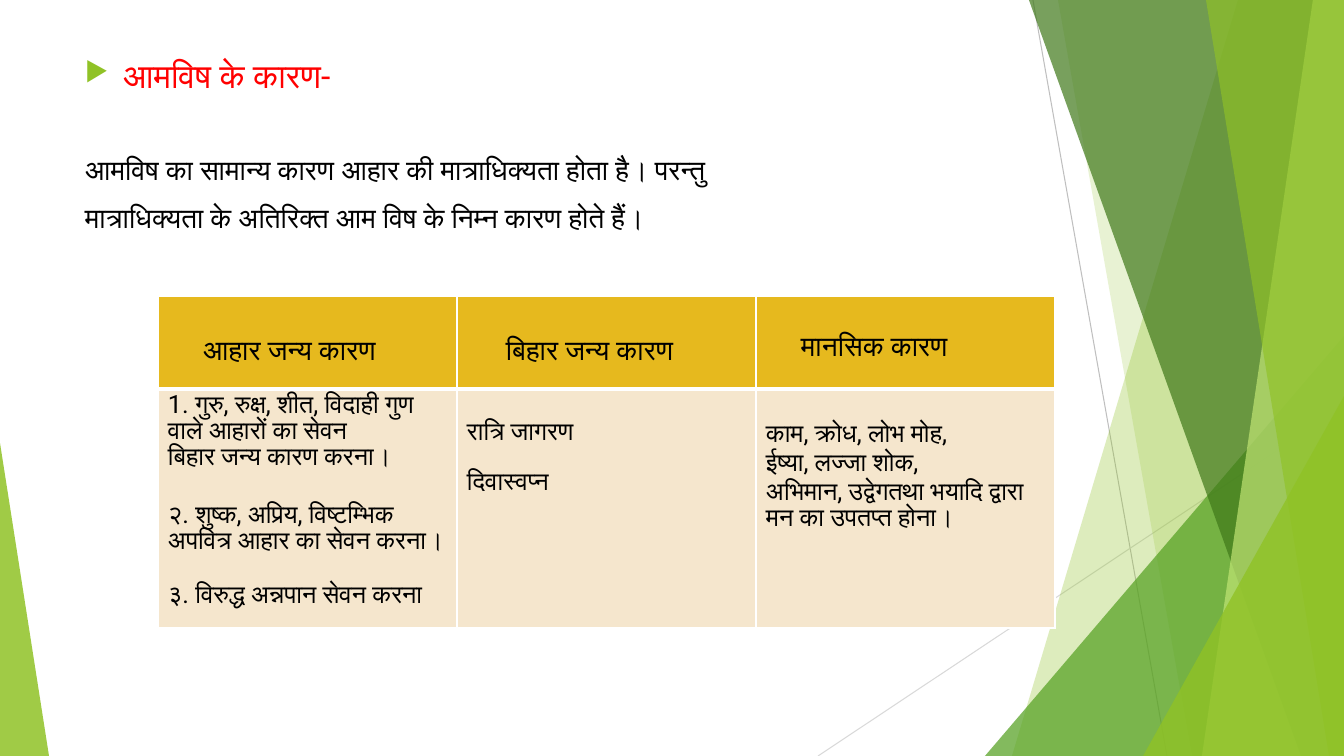
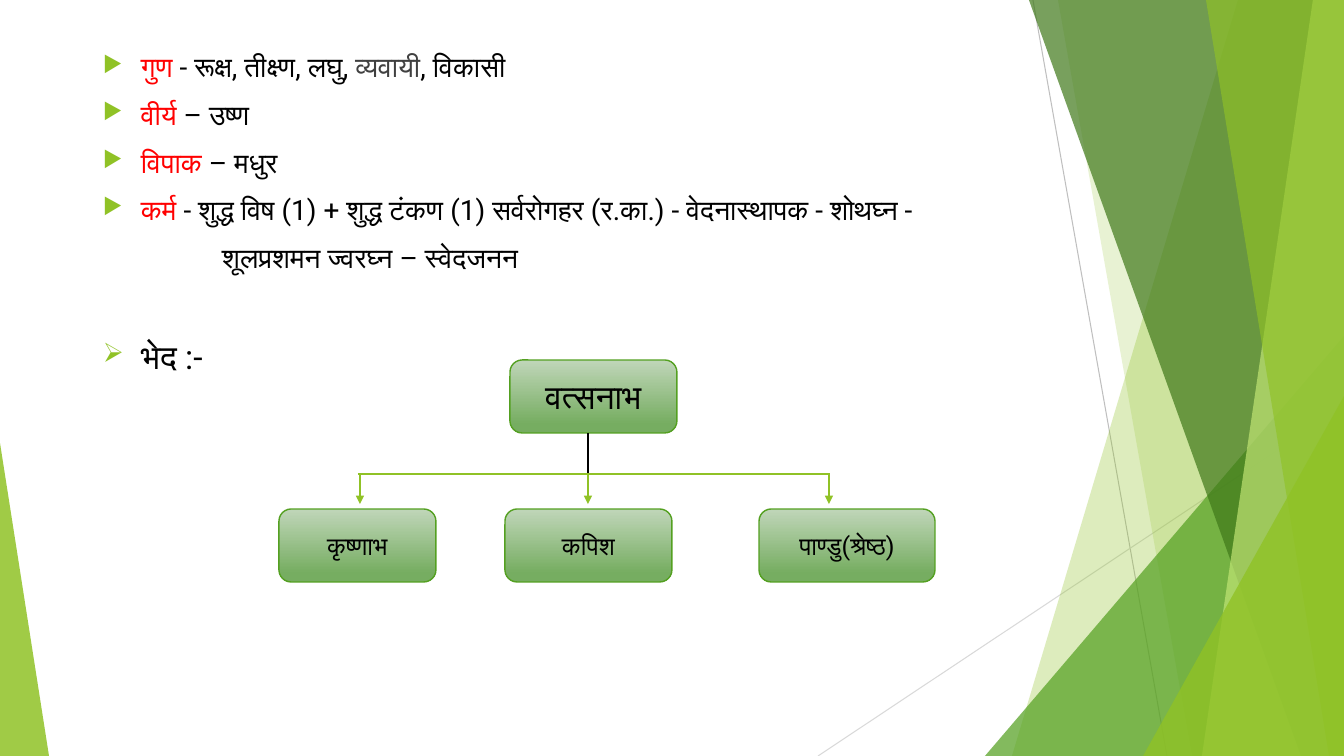
from dataclasses import dataclass

from lxml import etree
from pptx import Presentation
from pptx.dml.color import RGBColor
from pptx.enum.shapes import MSO_CONNECTOR, MSO_SHAPE
from pptx.enum.text import MSO_ANCHOR, PP_ALIGN
from pptx.oxml.ns import qn
from pptx.util import Emu, Pt

LINE = MSO_CONNECTOR.STRAIGHT
ROUND = MSO_SHAPE.ROUNDED_RECTANGLE
WEDGE = MSO_SHAPE.ISOSCELES_TRIANGLE
MIDDLE = MSO_ANCHOR.MIDDLE
CENTER = PP_ALIGN.CENTER

SCALE = 914400 / 100.8
WIDE, HIGH = 1344, 756


# Theme
@dataclass(frozen=True)
class Theme:
    font: str = "Roboto"
    big: int = 24
    mid: int = 20
    small: int = 18
    black: str = "000000"
    white: str = "FFFFFF"
    red: str = "FF0000"
    gray: str = "404040"
    lime: str = "90C226"
    pale: str = "C0E474"
    green: str = "54A021"
    deep: str = "3F7819"
    silver: str = "BFBFBF"
    mist: str = "D9D9D9"
    gold: str = "E6B91E"
    cream: str = "F5E6CD"
    shade: tuple = ((0, "C0D6B9"), (0.88, "76AD61"))


T = Theme()


# Basics
def px(n):
    return Emu(round(n * SCALE))


def rgb(code):
    return RGBColor.from_string(code)


def sub(node, tag, **attrs):
    return etree.SubElement(node, qn(tag), attrs)


# Text
def write(para, runs, size):
    for text, color in runs:
        run = para.add_run()
        run.text = text
        run.font.size = Pt(size)
        run.font.name = T.font
        run.font.color.rgb = rgb(color)
        sub(run.font._element, "a:cs", typeface=T.font)


def mark(para, sign):
    props = para._p.get_or_add_pPr()
    props.set("marL", str(px(38)))
    props.set("indent", str(px(-38)))
    sub(sub(props, "a:buClr"), "a:srgbClr", val=T.lime)
    sub(props, "a:buSzPct", val="80000")
    sub(props, "a:buChar", char=sign)


def fill_text(frame, items):
    """Each item: runs, size, space before (pt), bullet sign, left indent (px)."""
    for i, (runs, size, gap, sign, left) in enumerate(items):
        para = frame.paragraphs[0] if i == 0 else frame.add_paragraph()
        para.space_before = Pt(gap)
        write(para, runs, size)
        if sign:
            mark(para, sign)
        elif left:
            para._p.get_or_add_pPr().set("marL", str(px(left)))


def add_body(slide, x, y, w, h, items):
    frame = slide.shapes.add_textbox(px(x), px(y), px(w), px(h)).text_frame
    frame.word_wrap = True
    fill_text(frame, items)


# Shapes
def tint(shape, color, alpha):
    shape.shadow.inherit = False
    shape.line.fill.background()
    shape.fill.solid()
    shape.fill.fore_color.rgb = rgb(color)
    for node in shape.element.spPr.iter(qn("a:srgbClr")):
        sub(node, "a:alpha", val=str(alpha * 1000))


def add_line(slide, x1, y1, x2, y2, color, width=1, arrow=False):
    line = slide.shapes.add_connector(LINE, px(x1), px(y1), px(x2), px(y2))
    line.line.color.rgb = rgb(color)
    line.line.width = Pt(width)
    props = line.element.spPr
    if arrow:
        sub(props.find(qn("a:ln")), "a:tailEnd", type="triangle")
    sub(props, "a:effectLst")


def add_shard(slide, top, foot, color, alpha):
    pen = slide.shapes.build_freeform(top, 0, scale=SCALE)
    pen.add_line_segments([(WIDE, 0), (WIDE, HIGH), (foot, HIGH)], close=True)
    tint(pen.convert_to_shape(), color, alpha)


def add_wedge(slide, x, y, w, peak, color, alpha):
    shape = slide.shapes.add_shape(WEDGE, px(x), px(y), px(w), px(HIGH - y))
    shape.adjustments[0] = peak
    tint(shape, color, alpha)


def add_node(slide, x, y, w, text, size):
    node = slide.shapes.add_shape(ROUND, px(x), px(y), px(w), px(73))
    node.shadow.inherit = False
    node.fill.gradient()
    node.fill.gradient_angle = 270
    for stop, (place, color) in zip(node.fill.gradient_stops, T.shade):
        stop.position = place
        stop.color.rgb = rgb(color)
    node.line.color.rgb = rgb(T.green)
    node.line.width = Pt(1)
    frame = node.text_frame
    frame.word_wrap = True
    frame.vertical_anchor = MIDDLE
    frame.paragraphs[0].alignment = CENTER
    write(frame.paragraphs[0], [(text, T.black)], size)


# Table
def edge(cell, foot):
    props = cell._tc.get_or_add_tcPr()
    for i, side in enumerate(("lnL", "lnR", "lnT", "lnB")):
        width = foot if side == "lnB" else 1
        line = etree.Element(qn("a:" + side), w=str(Pt(width)))
        sub(sub(line, "a:solidFill"), "a:srgbClr", val=T.white)
        props.insert(i, line)


def set_cell(cell, color, left, top, foot):
    cell.fill.solid()
    cell.fill.fore_color.rgb = rgb(color)
    cell.margin_left, cell.margin_top = px(left), px(top)
    edge(cell, foot)


def add_grid(slide, x, y, col, rows, heads, lists):
    grid = slide.shapes.add_table(2, len(heads), px(x), px(y),
                                  px(col * len(heads)), px(sum(rows))).table
    for row, high in zip(grid.rows, rows):
        row.height = px(high)
    for i, (text, left, top) in enumerate(heads):
        grid.columns[i].width = px(col)
        cell = grid.cell(0, i)
        set_cell(cell, T.gold, left, top, 3)
        write(cell.text_frame.paragraphs[0], [(text, T.black)], T.mid)
    for i, (top, lines) in enumerate(lists):
        cell = grid.cell(1, i)
        set_cell(cell, T.cream, 10, top, 1)
        fill_text(cell.text_frame,
                  [([(text, T.black)], T.small, gap, None, 0) for text, gap in lines])
        for para in cell.text_frame.paragraphs:
            para.line_spacing = Pt(18.5)


# Shared backdrop
def add_page(deck):
    slide = deck.slides.add_slide(deck.slide_layouts[6])
    add_line(slide, 1033, 0, 1167, HIGH, T.silver, 0.75)
    add_line(slide, WIDE, 406, 818, HIGH, T.mist, 0.75)
    add_shard(slide, 1238, 1012, T.lime, 30)
    add_shard(slide, 1058, 1192, T.lime, 20)
    add_wedge(slide, 985, 336, 359, 1, T.green, 72)
    add_shard(slide, 1029, 1301, T.deep, 70)
    add_shard(slide, 1313, 1202, T.pale, 70)
    add_shard(slide, 1206, 1329, T.lime, 65)
    add_wedge(slide, 1143, 396, 201, 1, T.lime, 80)
    add_wedge(slide, 0, 443, 49, 0, T.lime, 85)
    return slide


# Slide 1: causes
def add_causes(deck):
    slide = add_page(deck)
    add_body(slide, 75, 50, 948, 200, [
        ([("आमविष के कारण-", T.red)], T.big, 10, "▶", 0),
        ([("आमविष का सामान्य कारण आहार की मात्राधिक्यता होता है। परन्तु", T.black)],
         T.mid, 41, None, 0),
        ([("मात्राधिक्यता के अतिरिक्त आम विष के निम्न कारण होते हैं।", T.black)],
         T.mid, 10, None, 0),
    ])
    heads = [("आहार जन्य कारण", 45, 38), ("बिहार जन्य कारण", 49, 38),
             ("मानसिक कारण", 45, 34)]
    lists = [
        (5, [("1. गुरु, रुक्ष, शीत, विदाही गुण वाले आहारों का सेवन", 0),
             ("बिहार जन्य कारण करना।", 0),
             ("२. शुष्क, अप्रिय, विष्टम्भिक अपवित्र आहार का सेवन करना।", 23),
             ("३. विरुद्ध अन्नपान सेवन करना", 20)]),
        (32, [("रात्रि जागरण", 0), ("दिवास्वप्न", 17)]),
        (34, [("काम, क्रोध, लोभ मोह,", 0), ("ईष्या, लज्जा शोक,", 2),
              ("अभिमान, उद्वेगतथा भयादि द्वारा मन का उपतप्त होना।", 2)]),
    ]
    add_grid(slide, 158, 296, 299, (93, 239), heads, lists)


# Slide 2: traits and kinds
def add_kinds(deck):
    slide = add_page(deck)
    traits = [
        [("गुण", T.red), (" - रूक्ष, तीक्ष्ण, लघु, ", T.black),
         ("व्यवायी", T.gray), (", विकासी", T.black)],
        [("वीर्य ", T.red), ("– उष्ण", T.black)],
        [("विपाक ", T.red), ("– मधुर", T.black)],
        [("कर्म ", T.red),
         ("- शुद्ध विष (1) + शुद्ध टंकण (1) सर्वरोगहर (र.का.) - वेदनास्थापक - शोथघ्न -",
          T.black)],
    ]
    items = [(runs, T.mid, 10, "▶", 0) for runs in traits]
    items.append(([("शूलप्रशमन ज्वरघ्न – स्वेदजनन", T.black)], T.mid, 10, None, 119))
    items.append(([("भेद :-", T.black)], T.big, 44, "➢", 0))
    add_body(slide, 93, 45, 1159, 340, items)

    # Tree
    add_node(slide, 510, 360, 167, "वत्सनाभ", T.big)
    add_line(slide, 588, 433, 588, 474, T.black)
    add_line(slide, 358, 474, 830, 474, T.lime)
    for x, w, text, stem in ((279, 157, "कृष्णाभ", 360), (505, 167, "कपिश", 588),
                             (759, 176, "पाण्डु(श्रेष्ठ)", 829)):
        add_node(slide, x, 509, w, text, T.small)
        add_line(slide, stem, 474, stem, 504, T.lime, arrow=True)


def main():
    deck = Presentation()
    deck.slide_width, deck.slide_height = px(WIDE), px(HIGH)
    add_causes(deck)
    add_kinds(deck)
    deck.save("out.pptx")


if __name__ == "__main__":
    main()
